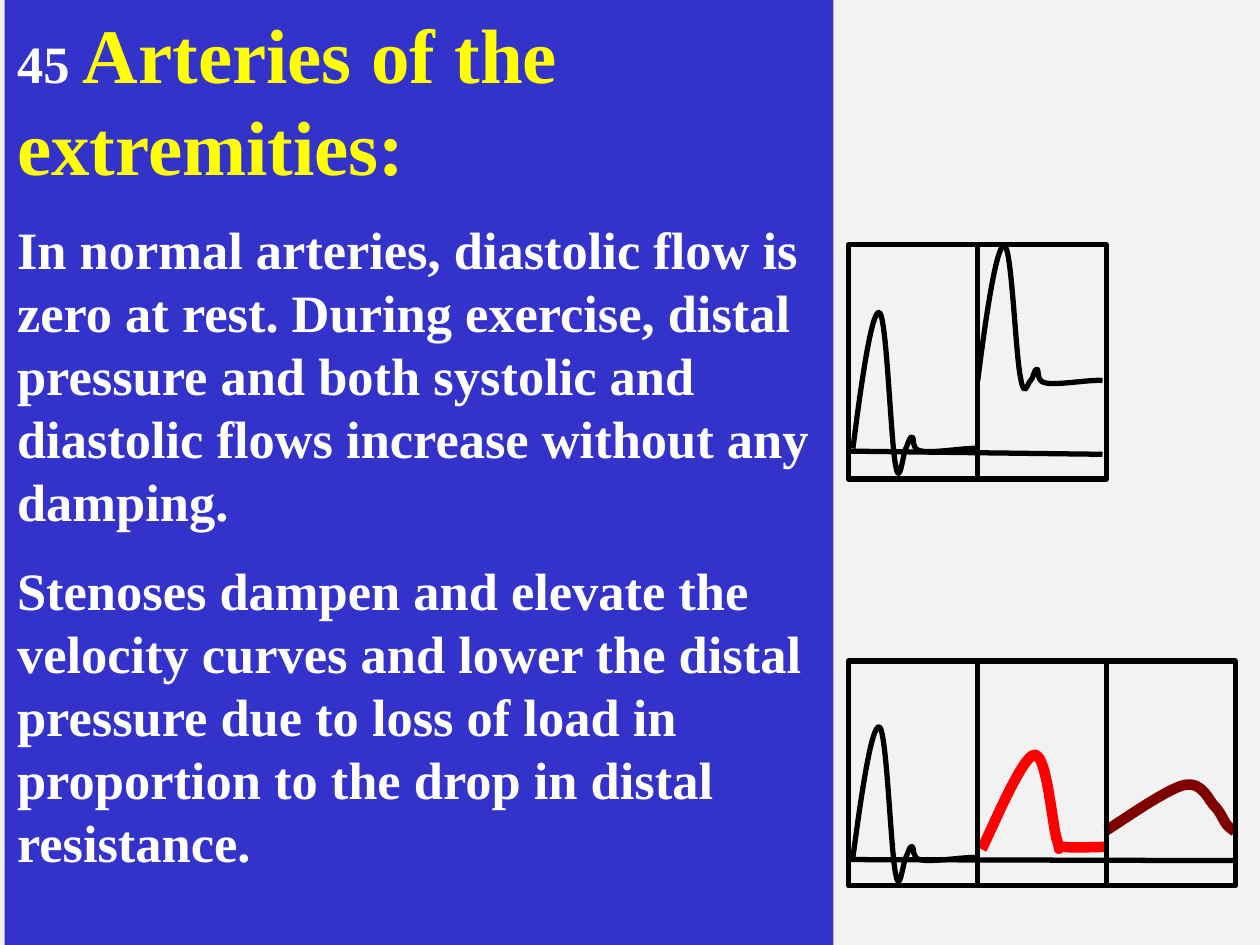
from pptx import Presentation
from pptx.dml.color import RGBColor
from pptx.enum.shapes import MSO_CONNECTOR as Connector, MSO_SHAPE as Shape
from pptx.enum.text import MSO_ANCHOR as Anchor, MSO_AUTO_SIZE as AutoSize, PP_ALIGN as Align
from pptx.oxml.ns import qn
from pptx.util import Pt
from lxml.etree import SubElement

PAPER = RGBColor(0xF2, 0xF2, 0xF2)
BLUE = RGBColor(0x33, 0x33, 0xCC)
WHITE = RGBColor(0xFF, 0xFF, 0xFF)
YELLOW = RGBColor(0xFF, 0xFF, 0x00)
BLACK = RGBColor(0x00, 0x00, 0x00)
RED = RGBColor(0xFF, 0x00, 0x00)
MAROON = RGBColor(0x80, 0x00, 0x00)

deck = Presentation()
deck.slide_width, deck.slide_height = Pt(720), Pt(540)
page = deck.slides.add_slide(deck.slide_layouts[6])
page.background.fill.solid()
page.background.fill.fore_color.rgb = PAPER


def add_text(para, text, size=30, color=WHITE):
    span = para.add_run()
    span.text = text
    span.font.name = "Times New Roman"
    span.font.size = Pt(size)
    span.font.bold = True
    span.font.color.rgb = color


def add_curve(shapes, left, top, xs, ys, color=BLACK, width=3, scale=1):
    """Draw a chain of cubic Bezier segments."""
    knots = [(Pt(left + x), Pt(top + y * scale)) for x, y in zip(xs, ys)]
    builder = shapes.build_freeform(*knots[0])
    builder.add_line_segments(knots[1:], close=False)
    curve = builder.convert_to_shape()
    # Every three line steps become one Bezier segment
    steps = list(curve._element.iter(qn("a:lnTo")))
    outline = steps[0].getparent()
    for start in range(0, len(steps), 3):
        segment = SubElement(outline, qn("a:cubicBezTo"))
        for step in steps[start:start + 3]:
            segment.append(step[0])
            outline.remove(step)
    curve.shadow.inherit = False
    curve.fill.background()
    curve.line.color.rgb = color
    curve.line.width = Pt(width)
    SubElement(curve.line._get_or_add_ln(), qn("a:round"))


# Text panel
panel = page.shapes.add_shape(Shape.RECTANGLE, Pt(2.7), Pt(0), Pt(473.6), Pt(545))
panel.shadow.inherit = False
panel.fill.solid()
panel.fill.fore_color.rgb = BLUE
panel.line.fill.background()
frame = panel.text_frame
frame.word_wrap = True
frame.auto_size = AutoSize.SHAPE_TO_FIT_TEXT
frame.vertical_anchor = Anchor.TOP
title = frame.paragraphs[0]
title.alignment = Align.LEFT
add_text(title, "45 ")
add_text(title, "Arteries of the extremities:", size=44, color=YELLOW)
for text in (
    "In normal arteries, diastolic flow is zero at rest. During exercise, distal pressure "
    "and both systolic and diastolic flows increase without any damping.",
    "Stenoses dampen and elevate the velocity curves and lower the distal pressure due to "
    "loss of load in proportion to the drop in distal resistance.",
):
    para = frame.add_paragraph()
    para.alignment = Align.LEFT
    para.space_before = Pt(15)
    add_text(para, text)

# Velocity curves: Bezier points relative to each curve's corner
PULSE_X = (0, 5, 10.8, 15.1, 19.4, 21.6, 24.5, 26.6, 28.8, 30.2,
           31.7, 32.4, 33.8, 35.3, 33.1, 38.9, 45.4, 65.5, 71.3)
REST_Y = (79.2, 39.6, 0, 1.4, 3.6, 76.3, 89.3, 102.2, 81.4, 79.2,
          76.3, 72, 72.7, 72.7, 79.9, 80.6, 82.1, 78.5, 79.2)
EXERCISE_Y = (77.8, 38.2, 0.7, 0.7, 0, 63.4, 76.3, 89.3, 78.5, 77.8,
              77, 70.6, 71.3, 71.3, 78.5, 79.2, 80.6, 77, 77.8)
DAMPED_X = (0, 5, 23, 30.2, 37.4, 40.3, 43.2, 46.1, 41.8, 46.8, 51.1, 69.8, 71.3)
DAMPED_Y = (54.7, 45.4, 1.4, 0.7, 0, 41, 49.7, 58.3, 52.6, 53.3, 54, 53.3, 53.3)
FLAT_X = (0, 7.2, 34.6, 44.6, 55.4, 58.3, 62.6, 66.2, 67, 69.1, 71.3, 72.7, 73.4)
FLAT_Y = (28.1, 23.8, 4.3, 2.2, 0, 11.5, 15.1, 19.4, 23, 25.2, 27.4, 28.1, 28.8)

# Each diagram: frame top, height and count, zero line ends, resting scale, other curves
LEFT, WIDTH = 484.8, 73.7
diagrams = (
    (139.9, 133.9, 2, (LEFT, 257.8, 630, 259.6), (177.1, 1),
     [(558.7, 139.7, PULSE_X, EXERCISE_Y, BLACK, 3)]),
    (377.8, 128.4, 3, (LEFT, 491.2, 705.8, 491.8), (414, 0.96),
     [(632.2, 446.4, FLAT_X, FLAT_Y, MAROON, 6),
      (560.9, 430.6, DAMPED_X, DAMPED_Y, RED, 6)]),
)
for top, height, count, ends, (rest_top, rest_scale), curves in diagrams:
    shapes = page.shapes.add_group_shape().shapes
    add_curve(shapes, 487.4, rest_top, PULSE_X, REST_Y, scale=rest_scale)
    zero = shapes.add_connector(Connector.STRAIGHT, *map(Pt, ends))
    zero.line.color.rgb = BLACK
    zero.line.width = Pt(3)
    SubElement(zero._element.spPr, qn("a:effectLst"))
    for curve in curves:
        add_curve(shapes, *curve)
    for column in range(count):
        box = shapes.add_shape(Shape.RECTANGLE, Pt(LEFT + column * WIDTH), Pt(top),
                               Pt(WIDTH), Pt(height))
        box.shadow.inherit = False
        box.fill.background()
        box.line.color.rgb = BLACK
        box.line.width = Pt(3)
        SubElement(box.line._get_or_add_ln(), qn("a:round"))

deck.save("out.pptx")
